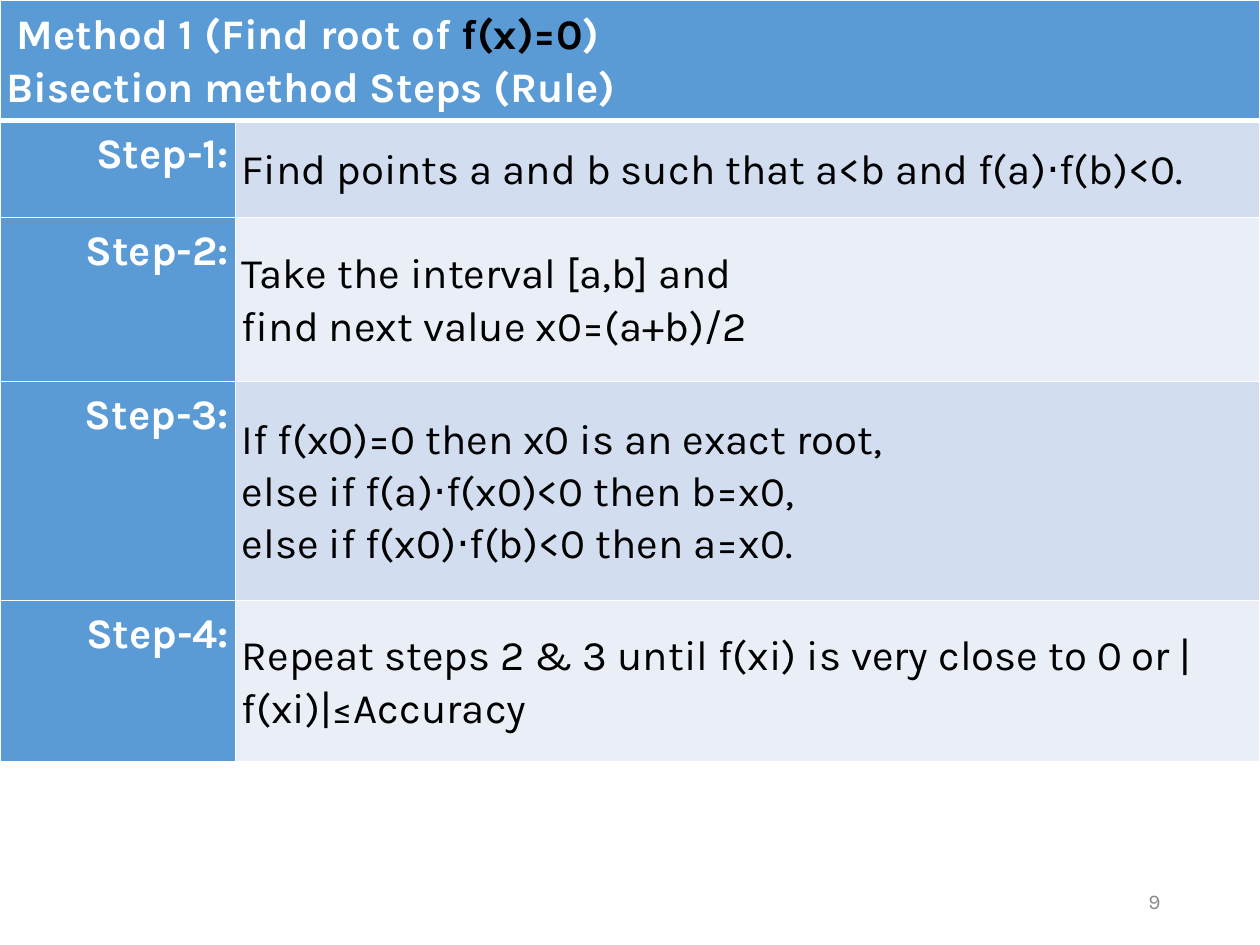
from lxml.etree import SubElement
from pptx import Presentation
from pptx.dml.color import RGBColor
from pptx.enum.text import MSO_ANCHOR as Anchor, PP_ALIGN as Align
from pptx.oxml.ns import qn
from pptx.util import Inches, Pt

FONT = "Karla"
WHITE = RGBColor(0xFF, 0xFF, 0xFF)
BLACK = RGBColor(0, 0, 0)
BLUE = RGBColor(0x5B, 0x9B, 0xD5)
BANDS = (RGBColor(0xD2, 0xDE, 0xEF), RGBColor(0xEA, 0xEF, 0xF7))
GRAY = RGBColor(0x89, 0x89, 0x89)

COLS = (1.87, 8.13)
ROWS = (0.95, 0.77, 1.3, 1.74, 1.28)
HEADING = (
    ((" Method 1 (Find root of ", WHITE), ("f(x)=0", BLACK), (")", WHITE)),
    (("Bisection method Steps (Rule)", WHITE),),
)
STEPS = (
    "Find points a and b such that a<b and f(a)⋅f(b)<0.",
    "Take the interval [a,b] and\vfind next value x0=(a+b)/2",
    "If f(x0)=0 then x0 is an exact root,\v"
    "else if f(a)⋅f(x0)<0 then b=x0,\v"
    "else if f(x0)⋅f(b)<0 then a=x0.",
    "Repeat steps 2 & 3 until f(xi) is very close to 0 or |f(xi)|≤Accuracy",
)


def set_attrs(obj, **values):
    """Set each given attribute on an object."""
    for name, value in values.items():
        setattr(obj, name, value)


def style_runs(p, color, size=24, bold=False):
    """Format every run of a paragraph."""
    for r in p.runs:
        set_attrs(r.font, name=FONT, size=Pt(size), bold=bold)
        r.font.color.rgb = color


def style_cell(cell, fill, anchor=Anchor.MIDDLE, bottom=1):
    """Give a cell its margins, white borders, fill and anchor."""
    margins = {f"margin_{side}": Inches(0.05) for side in ("left", "top", "right", "bottom")}
    set_attrs(cell, vertical_anchor=anchor, **margins)
    tc_pr = cell._tc.get_or_add_tcPr()
    for side, width in (("L", 1), ("R", 1), ("T", 1), ("B", bottom)):
        ln = SubElement(tc_pr, qn(f"a:ln{side}"), w=str(Pt(width)))
        SubElement(SubElement(ln, qn("a:solidFill")), qn("a:srgbClr"), val=str(WHITE))
    cell.fill.solid()
    cell.fill.fore_color.rgb = fill


def fill_heading(table):
    """Merge the top row and write the two-line heading."""
    cell = table.cell(0, 0)
    cell.merge(table.cell(0, 1))
    for c in table.rows[0].cells:
        style_cell(c, BLUE, bottom=3)
    tf = cell.text_frame
    for i, parts in enumerate(HEADING):
        p = tf.add_paragraph() if i else tf.paragraphs[0]
        p.line_spacing = 1.07
        for text, color in parts:
            r = p.add_run()
            r.text = text
            set_attrs(r.font, name=FONT, size=Pt(24), bold=True)
            r.font.color.rgb = color


def fill_step(table, row, text):
    """Write one step's label and its rule."""
    label, rule = table.rows[row].cells
    style_cell(label, BLUE, Anchor.TOP, 1)
    style_cell(rule, BANDS[(row - 1) % 2])
    for cell, words, align, color, bold in (
        (label, f"Step-{row}:", Align.RIGHT, WHITE, True),
        (rule, text, Align.LEFT, BLACK, False),
    ):
        p = cell.text_frame.paragraphs[0]
        set_attrs(p, text=words, alignment=align, line_spacing=1.07)
        style_runs(p, color, bold=bold)


def add_steps_table(slide, left, top, width, height):
    """Add the table of bisection steps in the given box."""
    table = slide.shapes.add_table(
        len(ROWS), len(COLS), Inches(left), Inches(top), Inches(width), Inches(height)
    ).table
    for col, w in zip(table.columns, COLS):
        col.width = Inches(w)
    for row, h in zip(table.rows, ROWS):
        row.height = Inches(h)
    fill_heading(table)
    for row, text in enumerate(STEPS, 1):
        fill_step(table, row, text)


def add_page_number(slide, number, left, top, width, height):
    """Add the page number in the given box."""
    box = slide.shapes.add_textbox(Inches(left), Inches(top), Inches(width), Inches(height))
    tf = box.text_frame
    set_attrs(tf, word_wrap=True, vertical_anchor=Anchor.MIDDLE)
    p = tf.paragraphs[0]
    set_attrs(p, text=str(number), alignment=Align.RIGHT)
    style_runs(p, GRAY, size=12)


def main():
    """Build and save the presentation."""
    prs = Presentation()
    set_attrs(prs, slide_width=Inches(10), slide_height=Inches(7.5))
    slide = prs.slides.add_slide(prs.slide_layouts[6])
    add_page_number(slide, 9, 7.06, 6.95, 2.25, 0.4)
    add_steps_table(slide, 0, 0, sum(COLS), sum(ROWS))
    prs.save("out.pptx")


if __name__ == "__main__":
    main()
